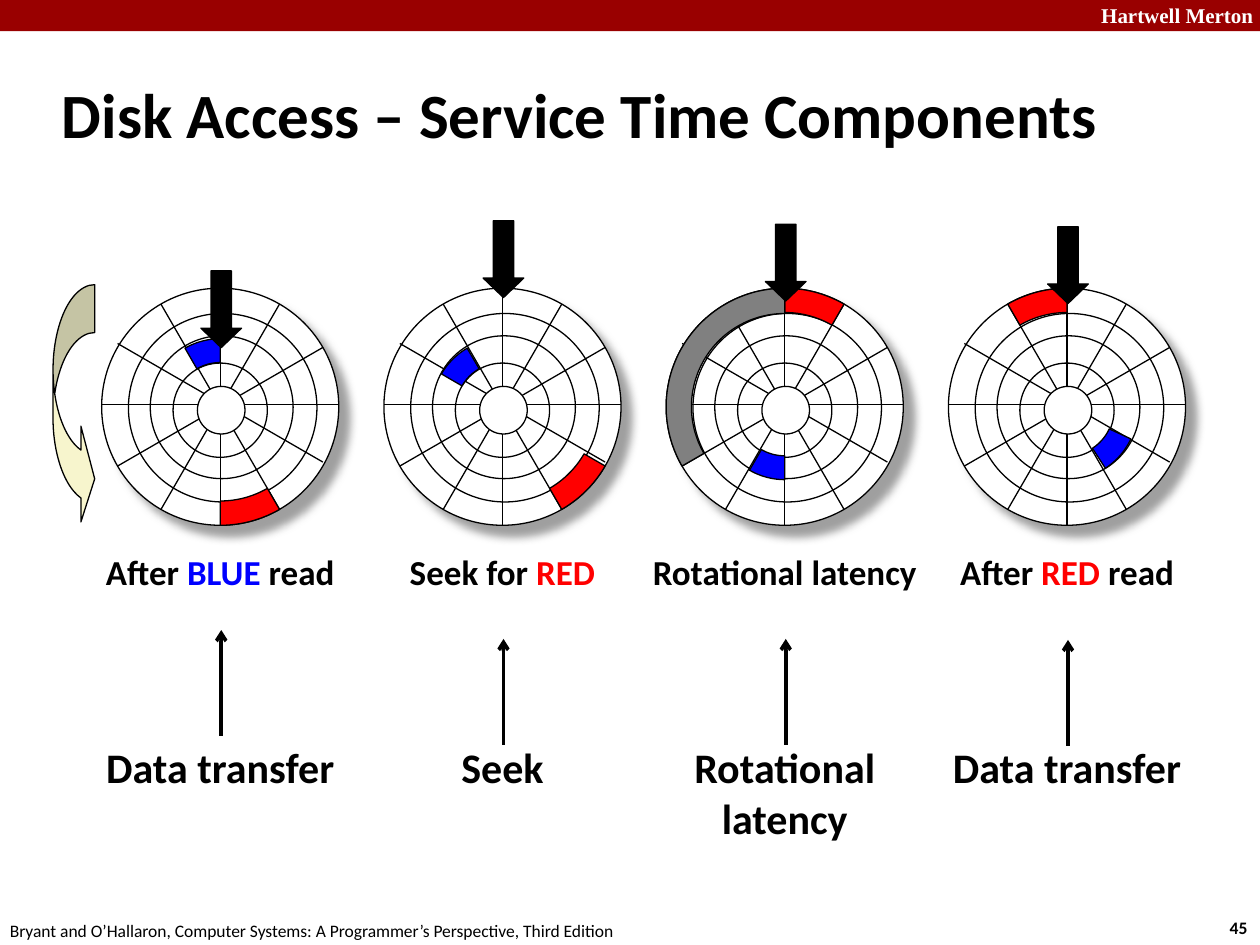
import math
from dataclasses import dataclass

import pptx
import pptx.dml.color
import pptx.enum.shapes
import pptx.enum.text
import pptx.oxml
import pptx.oxml.ns
import pptx.util
from pptx.util import Cm

SHAPE = pptx.enum.shapes.MSO_SHAPE
ALIGN = pptx.enum.text.PP_ALIGN


@dataclass(frozen=True)
class Theme:
    black: str = "000000"
    white: str = "FFFFFF"
    banner: str = "990000"
    red: str = "FF0000"
    blue: str = "0000FF"
    gray: str = "808080"
    cream: str = "F7F5CD"
    font: str = "Calibri"
    banner_font: str = "Times New Roman"
    title_size: int = 36
    stage_size: int = 24
    caption_size: int = 20
    banner_size: int = 12
    footer_size: int = 10
    thin: float = 0.75
    thick: float = 2


THEME = Theme()

# Disk geometry in cm: offset from the centre and radius
RINGS = [(0, 0, 2.39), (0.05, 0.02, 1.9), (0.03, 0.01, 1.44), (0, 0.07, 0.95)]
HUB = (0.02, 0.07, 0.48)
SPOKE_SHIFTS = [0, 0, 0, -0.05, -0.08, 0]
DISK_LEFT, DISK_PITCH, DISK_Y = 4.44, 5.69, 8.2

# Sector kinds: colour, inner radius, outer radius, vertical shift
RED = (THEME.red, 1.9, 2.39, 0)
BLUE = (THEME.blue, 0.94, 1.42, 0.05)
GRAY = (THEME.gray, 1.88, 2.39, 0)

# Each stage: head top, sectors (kind, from, to in degrees clockwise from the
# top), caption runs, caption width, stage label, top of the stage arrow
STAGES = [
    (5.46, [(BLUE, -30, 0), (RED, 150, 180)],
     [("After ", THEME.black), ("BLUE ", THEME.blue), ("read", THEME.black)],
     5.92, ["Data transfer"], 12.7),
    (4.45, [(RED, 120, 150), (BLUE, -60, -30)],
     [("Seek for ", THEME.black), ("RED", THEME.red)],
     5.08, ["Seek"], 12.88),
    (4.52, [(RED, 0, 30), (BLUE, 180, 210), (GRAY, 240, 360)],
     [("Rotational latency", THEME.black)],
     6.78, ["Rotational", "latency"], 12.88),
    (4.57, [(RED, -30, 0), (BLUE, 115, 147)],
     [("After ", THEME.black), ("RED", THEME.red), (" read", THEME.black)],
     5.92, ["Data transfer"], 12.9),
]


def rgb(color):
    return pptx.dml.color.RGBColor.from_string(color)


def polar(x, y, radius, degrees):
    """Point at an angle measured clockwise from the top."""
    angle = math.radians(degrees)
    return x + radius * math.sin(angle), y - radius * math.cos(angle)


class SlideBuilder:
    def __init__(self, slide, theme):
        self.slide = slide
        self.theme = theme
        self.shapes = slide.shapes

    def start_group(self):
        self.shapes = self.slide.shapes.add_group_shape().shapes

    def end_group(self):
        self.shapes = self.slide.shapes

    def paint(self, shape, fill, outlined=True):
        shape.shadow.inherit = False
        shape.fill.solid()
        shape.fill.fore_color.rgb = rgb(fill)
        if outlined:
            shape.line.color.rgb = rgb(self.theme.black)
            shape.line.width = pptx.util.Pt(self.theme.thin)
        else:
            shape.line.fill.background()
        return shape

    def preset(self, kind, left, top, width, height, fill, adjustments=(), outlined=True):
        shape = self.shapes.add_shape(kind, Cm(left), Cm(top), Cm(width), Cm(height))
        for index, value in enumerate(adjustments):
            shape.adjustments[index] = value
        return self.paint(shape, fill, outlined)

    def circle(self, x, y, radius):
        return self.preset(SHAPE.OVAL, x - radius, y - radius, 2 * radius, 2 * radius,
                           self.theme.white)

    def drop_shadow(self, shape):
        effects = shape._element.spPr.find(pptx.oxml.ns.qn("a:effectLst"))
        effects.append(pptx.oxml.parse_xml(
            f'<a:outerShdw {pptx.oxml.ns.nsdecls("a")} blurRad="63500" dist="107950" '
            f'dir="2700000" algn="ctr" rotWithShape="0"><a:srgbClr val="{self.theme.gray}">'
            '<a:alpha val="75000"/></a:srgbClr></a:outerShdw>'))

    def line(self, start, end, width, arrow=False):
        connector = self.shapes.add_connector(
            pptx.enum.shapes.MSO_CONNECTOR.STRAIGHT, *map(Cm, (*start, *end)))
        connector.line.color.rgb = rgb(self.theme.black)
        connector.line.width = pptx.util.Pt(width)
        namespace = pptx.oxml.ns.nsdecls("a")
        if arrow:
            connector.line._get_or_add_ln().append(
                pptx.oxml.parse_xml(f'<a:tailEnd {namespace} type="arrow"/>'))
        connector._element.spPr.append(pptx.oxml.parse_xml(f"<a:effectLst {namespace}/>"))

    def sector(self, x, y, kind, first, last):
        """Slice of a ring between two angles."""
        color, inner, outer, shift = kind
        angles = range(first, last + 1, 2) if (last - first) % 2 == 0 else range(first, last + 1)
        points = [polar(x, y + shift, outer, angle) for angle in angles]
        points += [polar(x, y + shift, inner, angle) for angle in reversed(angles)]
        points = [(Cm(across), Cm(down)) for across, down in points]
        builder = self.shapes.build_freeform(*points[0])
        builder.add_line_segments(points[1:], close=True)
        self.paint(builder.convert_to_shape(), color)

    def text(self, left, top, width, height, paragraphs, size, bold=True, font=None,
             align=ALIGN.LEFT, wrap=True, anchor=pptx.enum.text.MSO_ANCHOR.TOP):
        """Text box; each paragraph is a list of (text, colour) runs."""
        box = self.shapes.add_textbox(Cm(left), Cm(top), Cm(width), Cm(height))
        frame = box.text_frame
        frame.word_wrap = wrap
        frame.vertical_anchor = anchor
        for index, runs in enumerate(paragraphs):
            paragraph = frame.add_paragraph() if index else frame.paragraphs[0]
            paragraph.alignment = align
            for content, color in runs:
                run = paragraph.add_run()
                run.text = content
                run.font.name = font or self.theme.font
                run.font.size = pptx.util.Pt(size)
                run.font.bold = bold
                run.font.color.rgb = rgb(color)

    def disk(self, x, y, head_top, sectors):
        self.start_group()
        for index, (across, down, radius) in enumerate(RINGS):
            ring = self.circle(x + across, y + down, radius)
            if index == 0:
                self.drop_shadow(ring)
        for index, shift in enumerate(SPOKE_SHIFTS):
            ends = [polar(x, y + shift, RINGS[0][2], 30 * index + turn) for turn in (0, 180)]
            self.line(*ends, self.theme.thin)
        self.circle(x + HUB[0], y + HUB[1], HUB[2])
        for sector in sectors:
            self.sector(x, y, *sector)
        self.preset(SHAPE.DOWN_ARROW, x - 0.39, head_top, 0.82, 1.55,
                    self.theme.black, (0.5, 0.48))
        self.end_group()


def main():
    presentation = pptx.Presentation()
    presentation.slide_width, presentation.slide_height = Cm(25.4), Cm(19.05)
    slide = presentation.slides.add_slide(presentation.slide_layouts[6])
    builder = SlideBuilder(slide, THEME)

    builder.preset(SHAPE.RECTANGLE, 0, 0, 25.4, 0.63, THEME.banner, outlined=False)
    builder.text(21.95, -0.08, 3.63, 0.77, [[("Hartwell Merton", THEME.white)]],
                 THEME.banner_size, font=THEME.banner_font)
    builder.text(24.54, 18.36, 0.94, 0.68, [[("45", THEME.black)]],
                 THEME.footer_size, wrap=False)
    builder.text(-0.05, 18.42, 12.9, 0.68,
                 [[("Bryant and O’Hallaron, Computer Systems: A Programmer’s Perspective, "
                    "Third Edition", THEME.black)]],
                 THEME.footer_size, bold=False, wrap=False)
    builder.text(1, 1.22, 22.48, 2.11,
                 [[("Disk Access – Service Time Components", THEME.black)]],
                 THEME.title_size, anchor=pptx.enum.text.MSO_ANCHOR.MIDDLE)

    for index, (head_top, sectors, caption, width, label, arrow_top) in enumerate(STAGES):
        x = DISK_LEFT + index * DISK_PITCH
        builder.disk(x, DISK_Y, head_top, sectors)
        builder.text(x - width / 2, 10.97, width, 1.09, [caption],
                     THEME.caption_size, align=ALIGN.CENTER)
        builder.text(x - 2.6, 14.83, 5.2, 0.25 + 1.02 * len(label),
                     [[(part, THEME.black)] for part in label],
                     THEME.stage_size, align=ALIGN.CENTER)
        builder.line((x + 0.02, arrow_top + 2.13), (x + 0.02, arrow_top), THEME.thick, arrow=True)
    builder.preset(SHAPE.CURVED_RIGHT_ARROW, 1.07, 5.74, 0.84, 4.88, THEME.cream,
                   (1.15, 2.3, 0.33))

    presentation.save("out.pptx")


if __name__ == "__main__":
    main()
